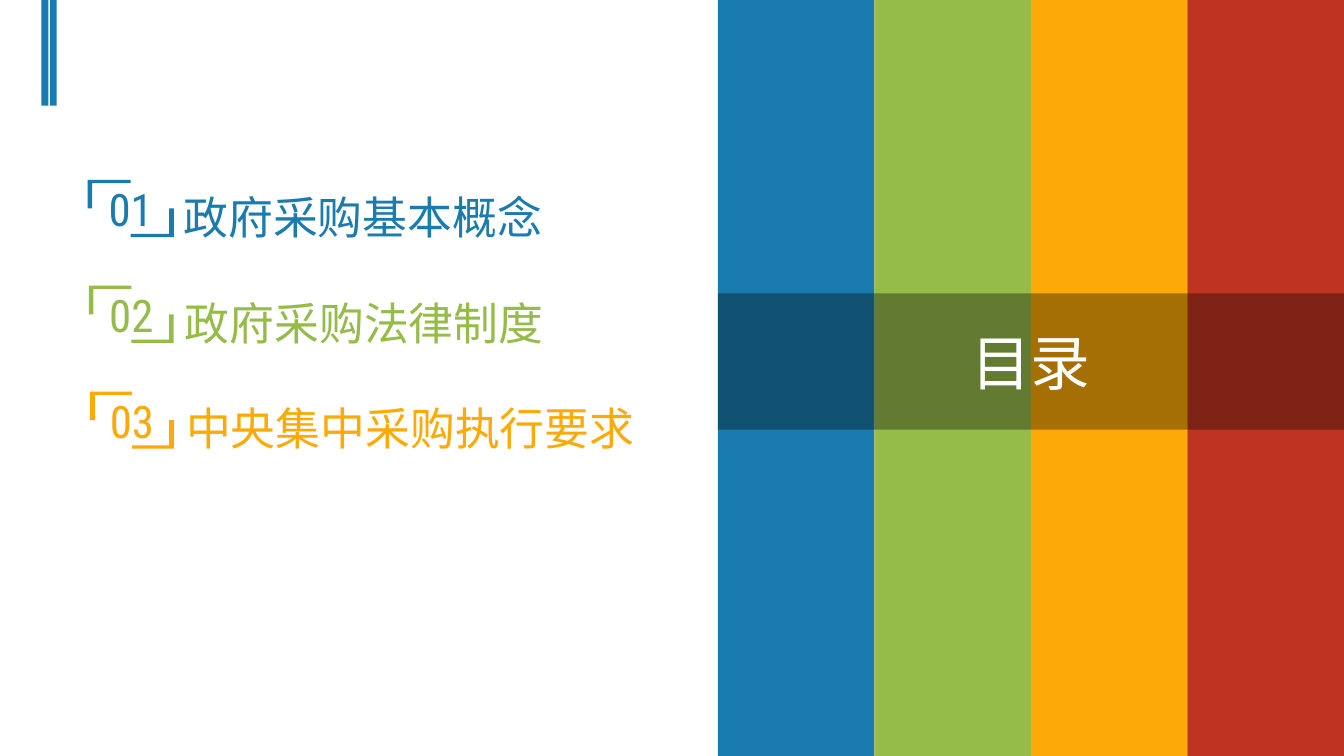
"""Build a contents slide with numbered topics beside four colour stripes."""

from lxml.etree import SubElement
from pptx import Presentation
from pptx.dml.color import RGBColor
from pptx.enum.shapes import MSO_SHAPE
from pptx.enum.text import MSO_ANCHOR, PP_ALIGN
from pptx.oxml.ns import qn
from pptx.util import Pt

COLOURS = {
    "blue": "1A7BAE",
    "green": "95BC49",
    "amber": "FDA907",
    "red": "BF3420",
    "black": "000000",
    "white": "FFFFFF",
}
CHINESE_FONT = "Noto Sans CJK SC"
NUMBER_FONT = "Roboto Condensed"
TOPICS = [
    ("政府采购基本概念", "blue"),
    ("政府采购法律制度", "green"),
    ("中央集中采购执行要求", "amber"),
]
WIDTH, HEIGHT = 720, 405
STRIPE_LEFT, STRIPE_WIDTH = 384.6, 83.85
ROW_STEP, ROW_SHIFT = 56.7, 0.72


def paint(shape, colour):
    shape.fill.solid()
    shape.fill.fore_color.rgb = RGBColor.from_string(COLOURS[colour])
    shape.line.fill.background()


def write(shape, text, size, font_name, colour, align, anchor):
    frame = shape.text_frame
    frame.word_wrap = True
    frame.vertical_anchor = anchor
    para = frame.paragraphs[0]
    para.text = text
    para.alignment = align
    para.font.size = Pt(size)
    para.font.name = font_name
    para.font.color.rgb = RGBColor.from_string(COLOURS[colour])
    for properties in para._p.iter(qn("a:defRPr")):
        SubElement(properties, qn("a:ea"), typeface=CHINESE_FONT)


def add_bar(page, left, width, height, colour):
    bar = page.shapes.add_shape(
        MSO_SHAPE.RECTANGLE, Pt(left), Pt(0), Pt(width), Pt(height)
    )
    bar.shadow.inherit = False
    paint(bar, colour)


def add_bracket(page, left, top, number, colour):
    right, bottom = 93.1, top + 30.6
    middle_x, middle_y = (left + right) / 2, (top + bottom) / 2
    corners = []
    for x, y, side in ((right, bottom, -1), (left, top, 1)):
        inner_x, inner_y = x + side * 2.5, y + side * 1.75
        corners.append([
            (x, y), (middle_x, y), (middle_x, inner_y),
            (inner_x, inner_y), (inner_x, middle_y), (x, middle_y),
        ])
    builder = None
    for corner in corners:
        points = [(Pt(x), Pt(y)) for x, y in corner]
        if builder is None:
            builder = page.shapes.build_freeform(*points[0])
        else:
            builder.move_to(*points[0])
        builder.add_line_segments(points[1:], close=True)
    bracket = builder.convert_to_shape()
    bracket.shadow.inherit = False
    paint(bracket, colour)
    write(bracket, number, 24, NUMBER_FONT, colour, PP_ALIGN.CENTER, MSO_ANCHOR.MIDDLE)


def add_topic(page, left, top, text, colour):
    box = page.shapes.add_textbox(Pt(left), Pt(top), Pt(286.6), Pt(36))
    box.text_frame.margin_left = Pt(12.6)
    write(box, text, 24, CHINESE_FONT, colour, PP_ALIGN.LEFT, MSO_ANCHOR.TOP)


def add_title_band(page):
    title = page.shapes.title
    title.left, title.top = Pt(STRIPE_LEFT), Pt(157.2)
    title.width, title.height = Pt(WIDTH - STRIPE_LEFT), Pt(73)
    paint(title, "black")
    for shade in title.element.spPr.iter(qn("a:srgbClr")):
        SubElement(shade, qn("a:alpha"), val="34000")
    write(title, "目录", 32, NUMBER_FONT, "white", PP_ALIGN.CENTER, MSO_ANCHOR.MIDDLE)
    title.element.getparent().append(title.element)


def main():
    deck = Presentation()
    deck.slide_width, deck.slide_height = Pt(WIDTH), Pt(HEIGHT)
    page = deck.slides.add_slide(deck.slide_layouts[5])
    for left in (22.2, 26.7):
        add_bar(page, left, 3.7, 56.7, "blue")
    for row, (text, colour) in enumerate(TOPICS):
        shift, drop = row * ROW_SHIFT, row * ROW_STEP
        add_topic(page, 85.7 + shift, 98 + drop, text, colour)
        add_bracket(page, 46.9 + shift, 96.4 + drop, f"{row + 1:02}", colour)
    for index, colour in enumerate(("blue", "green", "amber", "red")):
        add_bar(page, STRIPE_LEFT + index * STRIPE_WIDTH, STRIPE_WIDTH, HEIGHT, colour)
    add_title_band(page)
    deck.save("out.pptx")


if __name__ == "__main__":
    main()
